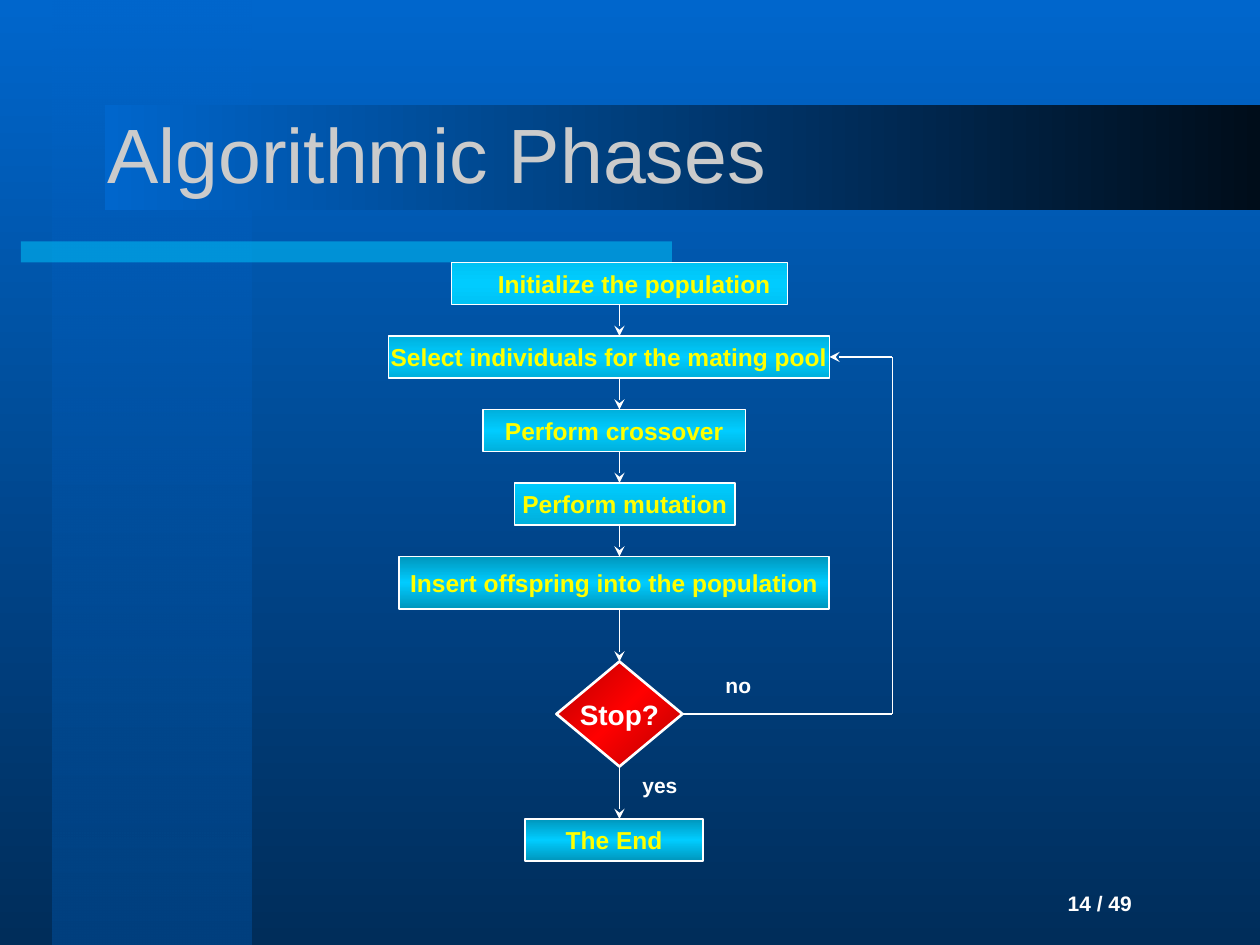
from dataclasses import dataclass

from lxml import etree
from pptx import Presentation
from pptx.dml.color import RGBColor
from pptx.enum.shapes import MSO_CONNECTOR, MSO_SHAPE
from pptx.enum.text import MSO_ANCHOR, MSO_AUTO_SIZE, PP_ALIGN
from pptx.oxml.ns import qn
from pptx.util import Pt

RECT, DECISION = MSO_SHAPE.RECTANGLE, MSO_SHAPE.FLOWCHART_DECISION
STRAIGHT = MSO_CONNECTOR.STRAIGHT
MIDDLE = MSO_ANCHOR.MIDDLE
LEFT, CENTER = PP_ALIGN.LEFT, PP_ALIGN.CENTER
TOP, BOTTOM, RIGHT = 0, 2, 3


@dataclass(frozen=True)
class Theme:
    font: str = "Arial"
    blue: str = "0066CC"
    panel: str = "00407F"
    navy: str = "002D5A"
    night: str = "000D1A"
    cyan: str = "00CCFF"
    cyan_light: str = "00C3F5"
    cyan_mid: str = "00B0DC"
    cyan_dark: str = "0096BC"
    red: str = "FF0000"
    red_dark: str = "B60000"
    white: str = "FFFFFF"
    yellow: str = "FFFF00"
    title: str = "CBCBCB"
    title_size: int = 44
    stop_size: int = 16
    step_size: int = 14
    label_size: int = 12


T = Theme()


def set_gradient(fill, root, colors, angle, alphas=None):
    """Spread the colors evenly along a clockwise angle in degrees."""
    fill.gradient()
    stops = root.find(".//" + qn("a:gsLst"))
    for stop in list(stops):
        stops.remove(stop)
    for i, color in enumerate(colors):
        gs = etree.SubElement(stops, qn("a:gs"), pos=str(i * 100000 // (len(colors) - 1)))
        clr = etree.SubElement(gs, qn("a:srgbClr"), val=color)
        if alphas:
            etree.SubElement(clr, qn("a:alpha"), val=str(alphas[i] * 1000))
    root.find(".//" + qn("a:lin")).set("ang", str(angle * 60000))


def write(tf, text, size, color, align=LEFT, bold=True):
    p = tf.paragraphs[0]
    p.alignment = align
    r = p.add_run()
    r.text = text
    r.font.name, r.font.size, r.font.bold = T.font, Pt(size), bold
    r.font.color.rgb = RGBColor.from_string(color)


prs = Presentation()
prs.slide_width, prs.slide_height = Pt(720), Pt(540)
s = prs.slides.add_slide(prs.slide_layouts[5])

# Background and decorative bars
set_gradient(s.background.fill, s.element, [T.blue, T.navy], 90)
bars = []
for box in [(30, 0, 114, 540), (12, 138, 372, 12), (60, 60, 660, 60)]:
    sp = s.shapes.add_shape(RECT, *map(Pt, box))
    sp.shadow.inherit = False
    sp.line.fill.background()
    bars.append(sp)
side_panel, accent, title_bar = bars
set_gradient(side_panel.fill, side_panel.element, [T.blue, T.panel], 90, [50, 100])
set_gradient(accent.fill, accent.element, [T.cyan, T.cyan], 0, [50, 50])
set_gradient(title_bar.fill, title_bar.element, [T.blue, T.night], 0)

# Title, brought in front of the bars
title = s.shapes.title
title.left, title.top, title.width, title.height = map(Pt, (54, 42, 612, 90))
tf = title.text_frame
tf.auto_size = MSO_AUTO_SIZE.NONE
tf.vertical_anchor = MIDDLE
write(tf, "Algorithmic Phases", T.title_size, T.title, bold=False)
s.shapes.element.append(title.element)

# Flowchart steps, stacked downwards: text, left, width, height, gap below, gradient
light = [T.cyan_light, T.cyan, T.cyan_light]
mid = [T.cyan_mid, T.cyan, T.cyan_mid]
dark = [T.cyan_dark, T.cyan, T.cyan_dark]
red = [T.red_dark, T.red, T.red_dark]
steps = [
    ("Initialize the population", 258, 192, 24, 18, light),
    ("Select individuals for the mating pool", 222, 252, 24, 18, mid),
    ("Perform crossover", 276, 150, 24, 18, mid),
    ("Perform mutation", 294, 126, 24, 18, [T.cyan, T.cyan_mid]),
    ("Insert offspring into the population", 228, 246, 30, 30, dark),
    ("Stop?", 318, 72, 60, 30, red),
    ("The End", 300, 102, 24, 0, dark),
]
axis_x, y = 354, 150
nodes, arrow_spans = [], []
for text, left, width, height, gap, colors in steps:
    is_stop = colors is red
    sp = s.shapes.add_shape(DECISION if is_stop else RECT, Pt(left), Pt(y), Pt(width), Pt(height))
    sp.shadow.inherit = False
    set_gradient(sp.fill, sp.element, colors, 45 if is_stop else 90)
    sp.line.color.rgb = RGBColor.from_string(T.white)
    sp.line.width = Pt(1.5 if is_stop else 1)
    tf = sp.text_frame
    tf.word_wrap = False
    tf.vertical_anchor = MIDDLE
    if is_stop:
        write(tf, text, T.stop_size, T.white, CENTER)
    else:
        write(tf, text, T.step_size, T.yellow, CENTER)
    nodes.append(sp)
    arrow_spans.append((y + height, y + height + gap))
    y += height + gap
nodes[0].text_frame.margin_left = Pt(24)
select, stop = nodes[1], nodes[5]

# Connectors: start, end, arrowhead, joined start, joined end
loop_x, select_y, stop_y = 510, 204, 408
links = []
for i, (y1, y2) in enumerate(arrow_spans[:-1]):
    upper, lower = nodes[i], nodes[i + 1]
    on_axis = [n.left + n.width // 2 == Pt(axis_x) for n in (upper, lower)]
    links.append(((axis_x, y1), (axis_x, y2), True,
                  (upper, BOTTOM) if on_axis[0] else None,
                  (lower, TOP) if on_axis[1] else None))
links += [
    ((390, stop_y), (loop_x, stop_y), False, (stop, RIGHT), None),
    ((loop_x, stop_y), (loop_x, select_y), False, None, None),
    ((loop_x, select_y), (474, select_y), True, None, (select, RIGHT)),
]
for start, end, arrow, begin_at, end_at in links:
    c = s.shapes.add_connector(STRAIGHT, *map(Pt, start + end))
    c.line.color.rgb = RGBColor.from_string(T.white)
    c.line.width = Pt(1)
    if begin_at:
        c.begin_connect(*begin_at)
    if end_at:
        c.end_connect(*end_at)
    if arrow:
        etree.SubElement(c.line._get_or_add_ln(), qn("a:tailEnd"), type="stealth")
    etree.SubElement(c.element.spPr, qn("a:effectLst"))

# Branch labels and page number
for text, left, top, width, height, anchor in [
    ("yes", 360, 438, 35, 22, MSO_ANCHOR.TOP),
    ("no", 407.5, 381, 30, 22, MSO_ANCHOR.TOP),
    ("14 / 49", 603, 498, 117, 36, MIDDLE),
]:
    tb = s.shapes.add_textbox(Pt(left), Pt(top), Pt(width), Pt(height))
    tf = tb.text_frame
    tf.word_wrap = True
    tf.vertical_anchor = anchor
    write(tf, text, T.label_size, T.white)

prs.save("out.pptx")
